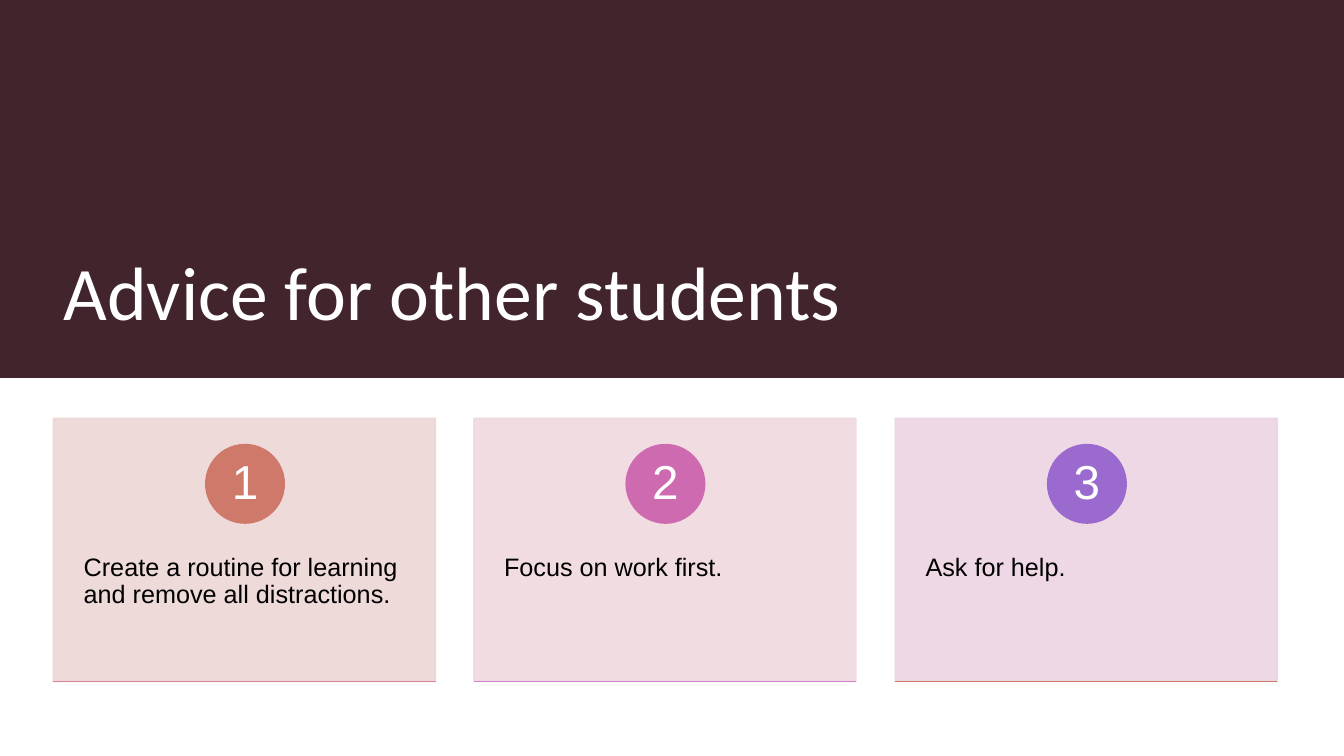
"""Build the slide with three numbered pieces of advice for students."""
from lxml import etree
from pptx import Presentation
from pptx import util as u
from pptx.dml.color import RGBColor
from pptx.enum import shapes, text
from pptx.oxml.ns import qn

EMU_PER_PX = 9144
COLORS = {"band": "41242C", "white": "FFFFFF", "black": "000000"}
CARDS = [
    ("Create a routine for learning and remove all distractions.", "EDD7D4", "CE796A", "D7859C"),
    ("Focus on work first.", "F0D9DE", "CE6AAF", "CE85D7"),
    ("Ask for help.", "EDD4E3", "9A6ACE", "CE796A"),
]
CARD_LEFT, CARD_TOP, CARD_WIDTH, CARD_HEIGHT = 53, 415, 379, 261
CARD_SPAN = 835
CIRCLE_INDENT, CIRCLE_TOP, CIRCLE_SIZE = 151, 441, 78
BODY_TOP, BODY_HEIGHT = 514, 156


def px(length):
    return u.Emu(length * EMU_PER_PX)


def rgb(color):
    return RGBColor.from_string(color)


def set_alpha(fill_parent, percent):
    for color in fill_parent.iter(qn("a:srgbClr")):
        etree.SubElement(color, qn("a:alpha")).set("val", str(percent * 1000))


def add_block(slide, kind, box, color, outlined=True):
    shape = slide.shapes.add_shape(kind, *map(px, box))
    shape.shadow.inherit = False
    shape.fill.solid()
    shape.fill.fore_color.rgb = rgb(color)
    if outlined:
        shape.line.color.rgb = rgb(color)
        shape.line.width = u.Pt(1)
    else:
        shape.line.fill.background()
    return shape


def set_text(shape, words, font, size, color, align, anchor, insets):
    frame = shape.text_frame
    frame.text = words
    frame.word_wrap = True
    frame.auto_size = text.MSO_AUTO_SIZE.NONE
    frame.vertical_anchor = anchor
    frame.margin_left = frame.margin_right = px(insets[0])
    frame.margin_top = frame.margin_bottom = px(insets[1])
    paragraph = frame.paragraphs[0]
    paragraph.alignment = align
    paragraph.line_spacing = 0.9
    run_font = paragraph.runs[0].font
    run_font.name, run_font.size = font, u.Pt(size)
    run_font.color.rgb = rgb(color)


def add_rule(slide, left, top, width, color):
    rule = slide.shapes.add_connector(
        shapes.MSO_CONNECTOR.STRAIGHT, px(left), px(top), px(left + width), px(top))
    rule.line.color.rgb = rgb(color)
    rule.line.width = u.Pt(1)
    etree.SubElement(rule.element.spPr, qn("a:effectLst"))


def add_title(slide, words):
    add_block(slide, shapes.MSO_SHAPE.RECTANGLE, (0, 0, 1333, 375), COLORS["band"], outlined=False)
    title = slide.shapes.title
    title.element.getparent().append(title.element)
    title.left, title.top, title.width, title.height = map(px, (53, 40, 1189, 299))
    set_text(title, words, "Calibri", 54, COLORS["white"],
             text.PP_ALIGN.LEFT, text.MSO_ANCHOR.BOTTOM, (10, 5))


def add_card(slide, left, number, advice, fill, accent, rule):
    card = add_block(slide, shapes.MSO_SHAPE.RECTANGLE,
                     (left, CARD_TOP, CARD_WIDTH, CARD_HEIGHT), fill)
    set_alpha(card.element.spPr, 90)
    body = slide.shapes.add_textbox(*map(px, (left, BODY_TOP, CARD_WIDTH, BODY_HEIGHT)))
    set_text(body, advice, "Arial", 18, COLORS["black"],
             text.PP_ALIGN.LEFT, text.MSO_ANCHOR.TOP, (30, 36))
    circle = add_block(slide, shapes.MSO_SHAPE.OVAL,
                       (left + CIRCLE_INDENT, CIRCLE_TOP, CIRCLE_SIZE, CIRCLE_SIZE), accent)
    set_text(circle, str(number), "Arial", 34, COLORS["white"],
             text.PP_ALIGN.CENTER, text.MSO_ANCHOR.MIDDLE, (6, 1))
    add_rule(slide, left, CARD_TOP + CARD_HEIGHT, CARD_WIDTH, rule)


def main():
    presentation = Presentation()
    presentation.slide_width, presentation.slide_height = px(1333), px(750)
    slide = presentation.slides.add_slide(presentation.slide_layouts[5])
    add_title(slide, "Advice for other students")
    for index, card in enumerate(CARDS):
        left = CARD_LEFT + index * CARD_SPAN // (len(CARDS) - 1)
        add_card(slide, left, index + 1, *card)
    presentation.save("out.pptx")


if __name__ == "__main__":
    main()
